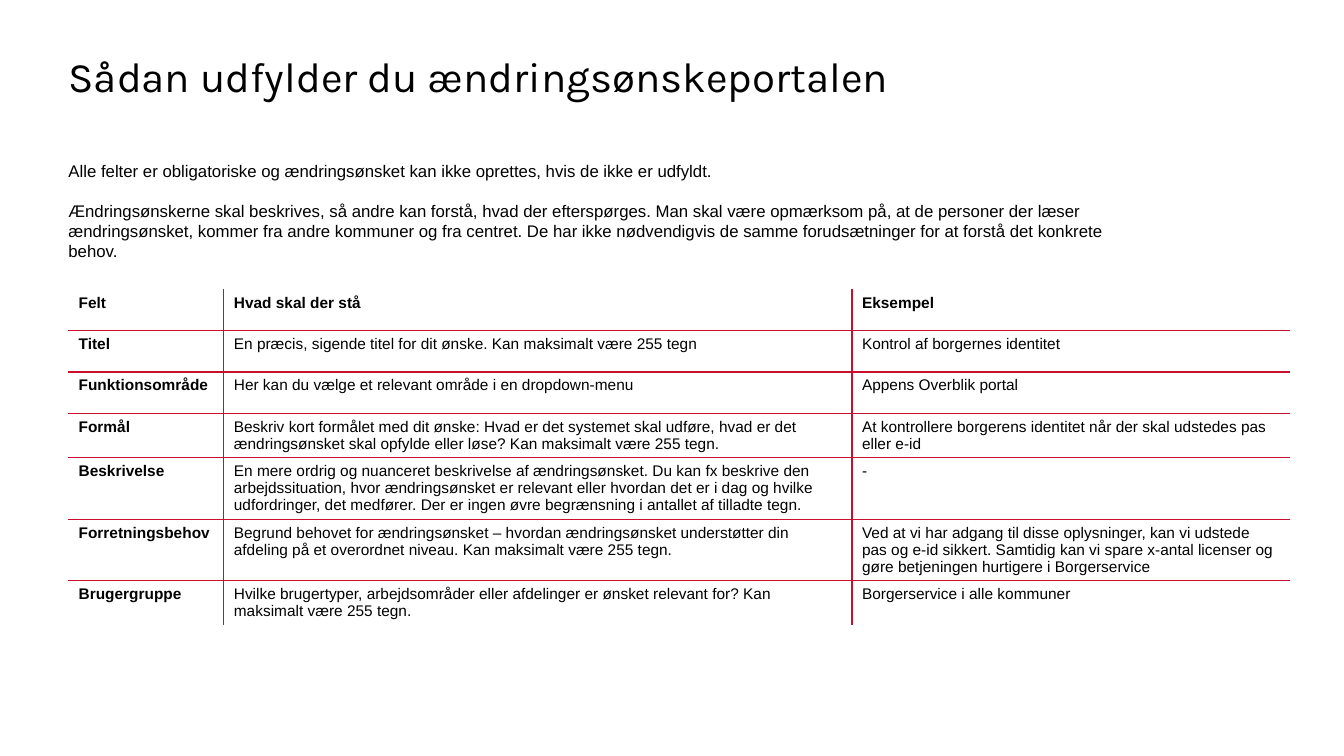
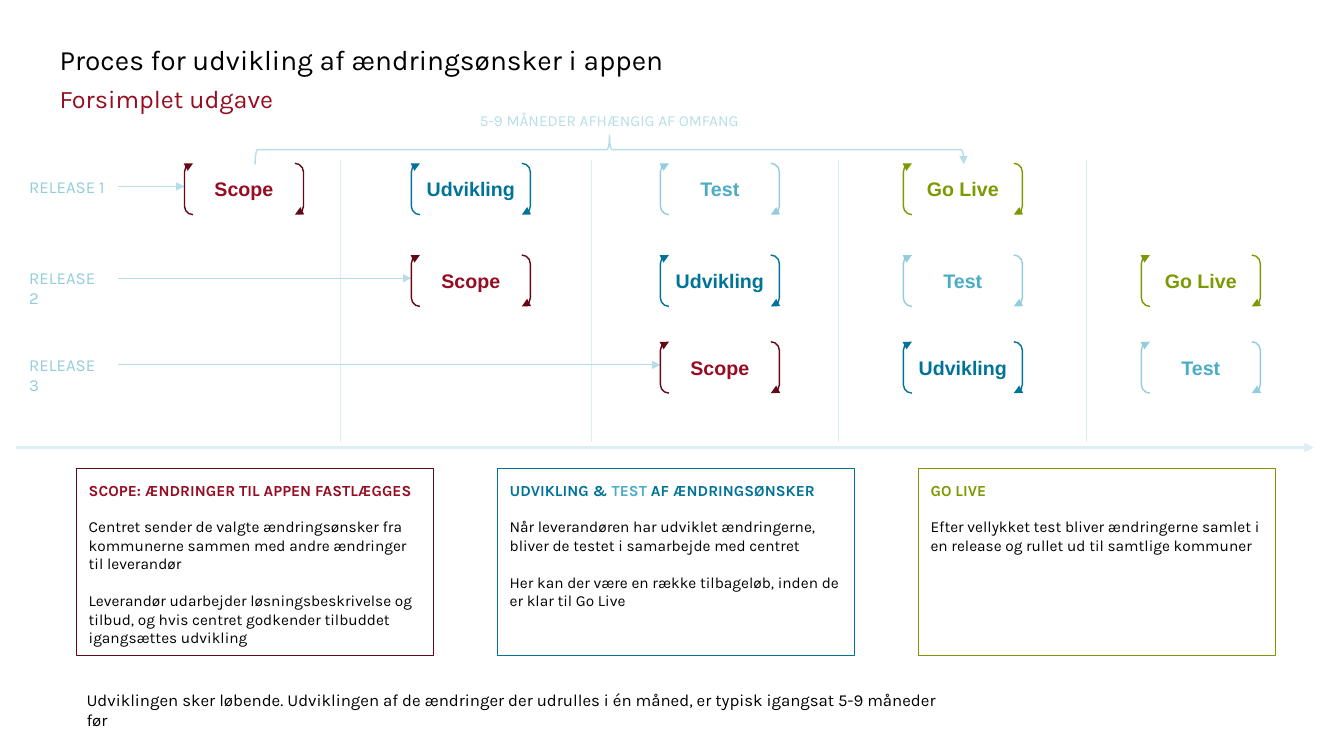
from dataclasses import dataclass

from lxml.etree import SubElement
from pptx import Presentation
from pptx.dml.color import RGBColor
from pptx.enum.shapes import MSO_CONNECTOR, MSO_SHAPE
from pptx.enum.text import MSO_ANCHOR, MSO_AUTO_SIZE, PP_ALIGN
from pptx.oxml.ns import qn
from pptx.util import Inches, Pt

COLORS = {
    "black": "000000", "white": "FFFFFF", "red": "C8102E",
    "wine": "960C22", "wine_dark": "640817", "blue": "007398",
    "teal": "4BACC6", "sky": "93CDDD", "green": "7A9A01",
    "pale": "B7DEE8", "axis": "DBEEF4",
}
BODY_FONT, BRAND_FONT = "Arial", "Karla"
TITLE_ONLY = 5

# stage name: (text colour, line colour)
STAGES = {
    "Scope": ("wine", "wine_dark"), "Udvikling": ("blue", "blue"),
    "Test": ("teal", "sky"), "Go Live": ("green", "green"),
}

FIELDS = [
    ("Felt", "Hvad skal der stå", "Eksempel"),
    ("Titel",
     "En præcis, sigende titel for dit ønske. Kan maksimalt være 255 tegn",
     "Kontrol af borgernes identitet"),
    ("Funktionsområde",
     "Her kan du vælge et relevant område i en dropdown-menu",
     "Appens Overblik portal"),
    ("Formål",
     "Beskriv kort formålet med dit ønske: Hvad er det systemet skal udføre, hvad er det "
     "ændringsønsket skal opfylde eller løse? Kan maksimalt være 255 tegn.",
     "At kontrollere borgerens identitet når der skal udstedes pas eller e-id"),
    ("Beskrivelse",
     "En mere ordrig og nuanceret beskrivelse af ændringsønsket. Du kan fx beskrive den "
     "arbejdssituation, hvor ændringsønsket er relevant eller hvordan det er i dag og hvilke "
     "udfordringer, det medfører. Der er ingen øvre begrænsning i antallet af tilladte tegn.",
     "-"),
    ("Forretningsbehov",
     "Begrund behovet for ændringsønsket – hvordan ændringsønsket understøtter din afdeling "
     "på et overordnet niveau. Kan maksimalt være 255 tegn.",
     "Ved at vi har adgang til disse oplysninger, kan vi udstede pas og e-id sikkert. "
     "Samtidig kan vi spare x-antal licenser og gøre betjeningen hurtigere i Borgerservice"),
    ("Brugergruppe",
     "Hvilke brugertyper, arbejdsområder eller afdelinger er ønsket relevant for? "
     "Kan maksimalt være 255 tegn.",
     "Borgerservice i alle kommuner"),
]

INTRO = [
    "Alle felter er obligatoriske og ændringsønsket kan ikke oprettes, hvis de ikke er udfyldt.",
    "Ændringsønskerne skal beskrives, så andre kan forstå, hvad der efterspørges. Man skal være "
    "opmærksom på, at de personer der læser ændringsønsket, kommer fra andre kommuner og fra "
    "centret. De har ikke nødvendigvis de samme forudsætninger for at forstå det konkrete behov.",
]

# line colour, heading runs, paragraphs
PHASES = [
    ("wine_dark", [("SCOPE: ÆNDRINGER TIL APPEN FASTLÆGGES", {"color": "wine"})],
     ["Centret sender de valgte ændringsønsker fra kommunerne sammen med andre ændringer "
      "til leverandør",
      "Leverandør udarbejder løsningsbeskrivelse og tilbud, og hvis centret godkender tilbuddet "
      "igangsættes udvikling"]),
    ("blue", [("UDVIKLING & ", {"color": "blue"}), ("TEST", {"color": "teal"}),
              (" AF ÆNDRINGSØNSKER", {"color": "blue"})],
     ["Når leverandøren har udviklet ændringerne, bliver de testet i samarbejde med centret",
      "Her kan der være en række tilbageløb, inden de er klar til Go Live"]),
    ("green", [("GO LIVE", {"color": "green"})],
     ["Efter vellykket test bliver ændringerne samlet i en release og rullet ud til "
      "samtlige kommuner"]),
]


@dataclass
class Box:
    left: float
    top: float
    width: float
    height: float

    def inches(self):
        return [Inches(v) for v in (self.left, self.top, self.width, self.height)]


def rgb(name):
    return RGBColor.from_string(COLORS[name])


def write(frame, paragraphs, size=12, font=BODY_FONT, color="black", bold=False,
          align=PP_ALIGN.LEFT, anchor=MSO_ANCHOR.TOP, gap=0, leading=None, margin=None):
    """Fill a frame; a paragraph is a string or a list of (text, overrides) runs."""
    frame.word_wrap = True
    frame.auto_size = MSO_AUTO_SIZE.NONE
    frame.vertical_anchor = anchor
    if margin is not None:
        frame.margin_left = frame.margin_right = Inches(margin)
        frame.margin_top = frame.margin_bottom = Inches(margin)
    for index, content in enumerate(paragraphs):
        paragraph = frame.add_paragraph() if index else frame.paragraphs[0]
        paragraph.alignment = align
        paragraph.space_before = Pt(gap if index else 0)
        if leading:
            paragraph.line_spacing = Pt(leading)
        for text, own in [(content, {})] if isinstance(content, str) else content:
            if text == "\n":
                paragraph.add_line_break()
                continue
            run = paragraph.add_run()
            run.text = text
            run.font.name = font
            run.font.size = Pt(own.get("size", size))
            run.font.bold = own.get("bold", bold)
            run.font.color.rgb = rgb(own.get("color", color))


def add_text(slide, box, paragraphs, **style):
    write(slide.shapes.add_textbox(*box.inches()).text_frame, paragraphs, **style)


def set_line(item, color, width, arrow=False):
    item.line.color.rgb = rgb(color)
    item.line.width = Pt(width)
    if arrow:
        SubElement(item.line._get_or_add_ln(), qn("a:tailEnd"), type="triangle")


def add_line(slide, x1, y1, x2, y2, color, width=0.75, arrow=False):
    line = slide.shapes.add_connector(MSO_CONNECTOR.STRAIGHT, *map(Inches, (x1, y1, x2, y2)))
    set_line(line, color, width, arrow)
    SubElement(line._element.spPr, qn("a:effectLst"))


def add_outlined(slide, kind, box, color, width, arrow=False, fill="white"):
    shape = slide.shapes.add_shape(kind, *box.inches())
    shape.shadow.inherit = False
    if fill:
        shape.fill.solid()
        shape.fill.fore_color.rgb = rgb(fill)
    else:
        shape.fill.background()
    set_line(shape, color, width, arrow)
    return shape


def add_titled_slide(deck, box, runs):
    slide = deck.slides.add_slide(deck.slide_layouts[TITLE_ONLY])
    title = slide.shapes.title
    title.left, title.top, title.width, title.height = box.inches()
    write(title.text_frame, [runs], font=BRAND_FONT, leading=27, margin=0)
    return slide


def set_borders(cell, edges):
    properties = cell._tc.get_or_add_tcPr()
    for side, color in edges.items():
        line = SubElement(properties, qn(f"a:ln{side}"), w=str(Pt(1)))
        fill = SubElement(line, qn("a:solidFill"))
        SubElement(fill, qn("a:srgbClr"), val=COLORS[color])


def add_field_table(slide, box, shares):
    """Red rules inside, white ones along the outer edge."""
    last_row, last_col = len(FIELDS) - 1, len(shares) - 1
    table = slide.shapes.add_table(len(FIELDS), len(shares), *box.inches()).table
    table.first_row = table.horz_banding = False
    for column, share in zip(table.columns, shares):
        column.width = Inches(box.width * share / sum(shares))
    for r, texts in enumerate(FIELDS):
        for c, text in enumerate(texts):
            cell = table.cell(r, c)
            outer = {"L": c == 0, "R": c == last_col, "T": r == 0, "B": r == last_row}
            set_borders(cell, {s: "white" if edge else "red" for s, edge in outer.items()})
            cell.fill.solid()
            cell.fill.fore_color.rgb = rgb("white")
            write(cell.text_frame, [text], size=11, bold=r == 0 or c == 0)


def add_release_plan(slide, box):
    """Releases as rows, each starting one column later than the row above."""
    columns = [box.left + x for x in (1.67, 3.92, 6.39, 8.8, 11.16)]
    rows = [box.top + y for y in (0.03, 0.94, 1.8)]
    bottom = box.top + box.height
    add_line(slide, box.left, bottom, box.left + box.width, bottom, "axis", 2.25, arrow=True)
    for x in (3.22, 5.71, 8.16, 10.62):
        add_line(slide, box.left + x, box.top, box.left + x, bottom - 0.05, "axis")
    for release, top in enumerate(rows):
        add_text(slide, Box(box.left + 0.03, top + 0.08, 0.97, 0.3),
                 [f"RELEASE {release + 1}"], font=BRAND_FONT, color="sky")
        add_line(slide, box.left + 1.01, top + 0.23, columns[release], top + 0.23,
                 "pale", arrow=True)
        for left, (stage, (ink, outline)) in zip(columns[release:], STAGES.items()):
            bracket = add_outlined(slide, MSO_SHAPE.DOUBLE_BRACKET, Box(left, top, 1.18, 0.51),
                                   outline, 1, arrow=True)
            write(bracket.text_frame, [stage], size=14, color=ink, bold=True,
                  align=PP_ALIGN.CENTER, anchor=MSO_ANCHOR.MIDDLE, margin=0)


def add_duration(slide, box):
    """Caption above a brace that spans the whole box."""
    depth = box.height / 2
    add_text(slide, Box(box.left, box.top, box.width, depth),
             ["5-9 MÅNEDER AFHÆNGIG AF OMFANG"], size=11, font=BRAND_FONT, color="pale",
             align=PP_ALIGN.CENTER)
    upright = Box(box.left + (box.width - depth) / 2,
                  box.top + 1.5 * depth - box.width / 2, depth, box.width)
    brace = add_outlined(slide, MSO_SHAPE.LEFT_BRACE, upright, "pale", 1, arrow=True, fill=None)
    brace.rotation = 90


def add_phases(slide, box, card_width):
    step = (box.width - card_width) / (len(PHASES) - 1)
    for index, (outline, heading, body) in enumerate(PHASES):
        card = add_outlined(slide, MSO_SHAPE.RECTANGLE,
                            Box(box.left + index * step, box.top, card_width, box.height),
                            outline, 0.75)
        bold_heading = [(text, {**own, "bold": True}) for text, own in heading]
        write(card.text_frame, [bold_heading, *body], size=11, font=BRAND_FONT,
              gap=13, margin=0.12)


def build_portal_guide(deck):
    slide = add_titled_slide(deck, Box(0.68, 0.63, 11.92, 0.92),
                             [("Sådan udfylder du ændringsønskeportalen", {"size": 30})])
    add_field_table(slide, Box(0.68, 2.87, 12.11, 2.87), (1.54, 6.23, 4.34))
    add_text(slide, Box(0.58, 1.55, 10.88, 1.11), INTRO, gap=13.8)


def build_process(deck):
    slide = add_titled_slide(deck, Box(0.59, 0.38, 11.92, 0.92), [
        ("Proces for udvikling af ændringsønsker i appen", {"size": 20}),
        ("\n", {}),
        ("Forsimplet udgave", {"size": 18, "color": "wine"}),
    ])
    add_release_plan(slide, Box(0.16, 1.59, 12.87, 2.85))
    add_duration(slide, Box(2.53, 1.05, 7.03, 0.58))
    add_phases(slide, Box(0.76, 4.65, 11.89, 1.85), card_width=3.54)
    add_text(slide, Box(0.76, 6.79, 8.79, 0.3),
             ["Udviklingen sker løbende. Udviklingen af de ændringer der udrulles i én måned, "
              "er typisk igangsat 5-9 måneder før"], font=BRAND_FONT)


def main():
    deck = Presentation()
    deck.slide_width, deck.slide_height = Inches(13.33), Inches(7.5)
    build_portal_guide(deck)
    build_process(deck)
    deck.save("out.pptx")


if __name__ == "__main__":
    main()
